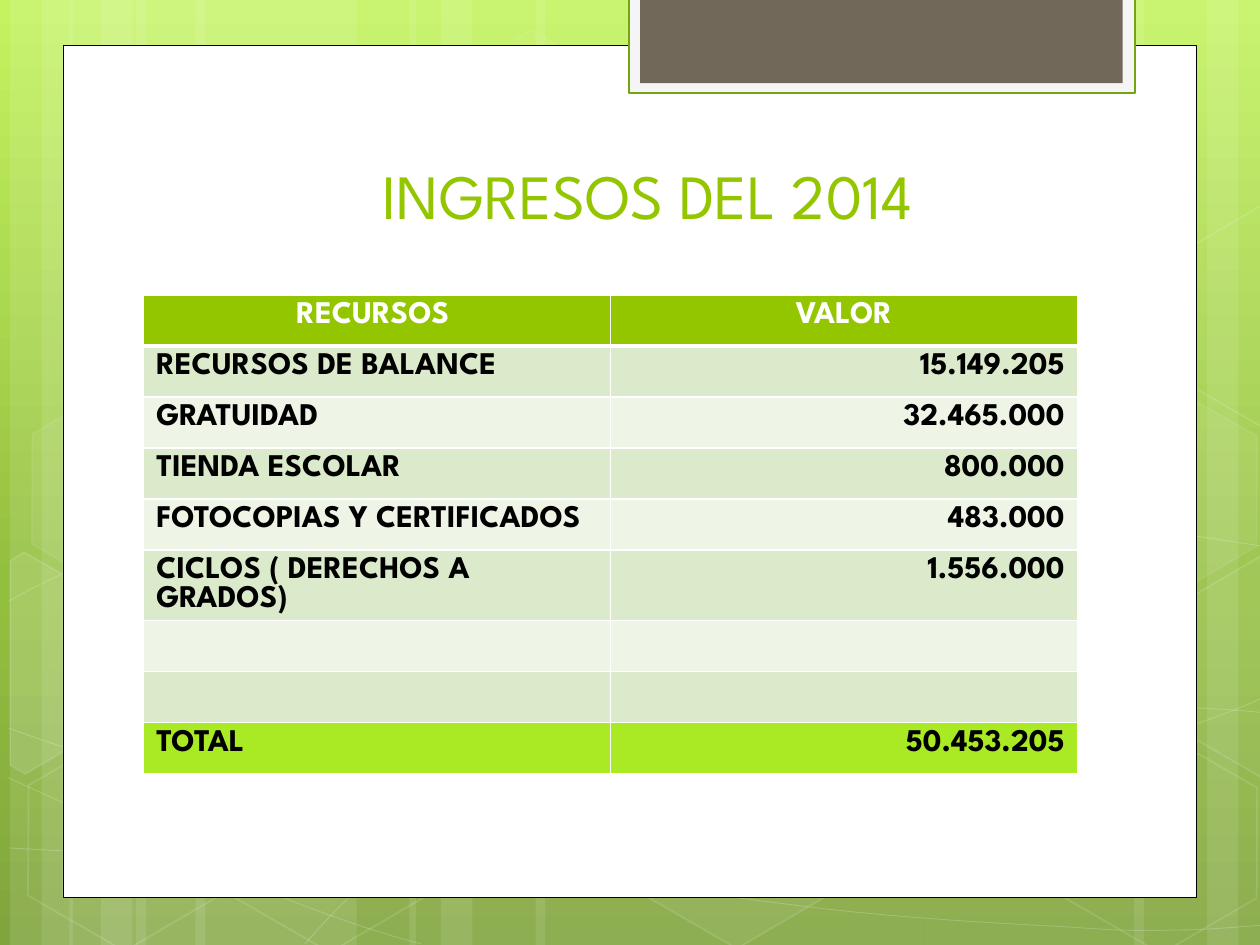
from copy import deepcopy
from dataclasses import dataclass
from math import cos, radians, sin

from lxml import etree
from pptx import Presentation
from pptx.dml.color import RGBColor
from pptx.enum.shapes import MSO_SHAPE
from pptx.enum.text import MSO_ANCHOR, PP_ALIGN
from pptx.oxml.ns import qn
from pptx.util import Inches, Pt

RECT, HEXAGON = MSO_SHAPE.RECTANGLE, MSO_SHAPE.HEXAGON
LEFT, CENTER, RIGHT = PP_ALIGN.LEFT, PP_ALIGN.CENTER, PP_ALIGN.RIGHT
BOTTOM = MSO_ANCHOR.BOTTOM


@dataclass(frozen=True)
class Theme:
    font: str = "League Spartan"
    title_size: int = 36
    cell_size: int = 18
    white: str = "FFFFFF"
    black: str = "000000"
    accent: str = "94C600"
    total: str = "AAEA25"
    bands: tuple = ("DCEACC", "EEF5E7")
    tab_edge: str = "F5F5F5"
    tab_line: str = "74A510"
    tab: str = "71685A"
    sky: tuple = ((0, "C3F35F"), (0.62, "93BF3F"), (1, "81A53E"))


THEME = Theme()
WIDTH, HEIGHT = 10, 7.5
TILT = 30

STRIPE_GROUPS = [(0.08, 1.75), (0.55, 1.75), (3.25, 3.08)]
RIGHT_STRIPES = [(7.33, 1.75), (9.58, 0.5), (9, 0.83)]

CURVES = [
    [(0.07, 6.73), (0.61, 6.76), (1.15, 6.79), (1.9, 6.78), (2.65, 6.77), (3.58, 6.75), (4.58, 6.65),
     (5.58, 6.55), (7, 6.36), (7.92, 6.17), (8.83, 5.98), (9.77, 5.68), (10.07, 5.51)],
    [(0.07, 4.77), (0.36, 4.61), (0.65, 4.46), (1.21, 4.31), (1.78, 4.16), (2.59, 3.94), (3.47, 3.87),
     (4.36, 3.8), (5.44, 3.79), (6.54, 3.87), (7.64, 3.95), (9.47, 4.26), (10.07, 4.34)],
    [(0.06, 6.17), (1.27, 6.72), (2.47, 7.27), (3.34, 7.49)],
    [(0.07, 5.78), (0.38, 5.89), (0.7, 6), (1.28, 6.16), (1.86, 6.31), (2.73, 6.56), (3.57, 6.73),
     (4.4, 6.9), (5.45, 7.08), (6.28, 7.18), (7.11, 7.29), (8, 7.33), (8.53, 7.36),
     (9.05, 7.4), (9.19, 7.38), (9.45, 7.38), (9.71, 7.37), (9.89, 7.35), (10.07, 7.34)],
    [(2.42, 7.49), (2.6, 7.29), (2.78, 7.09), (3.02, 6.91), (3.26, 6.73), (3.6, 6.53), (3.88, 6.39),
     (4.16, 6.25), (4.33, 6.19), (4.7, 6.09), (5.06, 5.99), (5.73, 5.85), (6.08, 5.78),
     (6.44, 5.71), (6.49, 5.71), (6.8, 5.69), (7.11, 5.66), (7.6, 5.63), (7.94, 5.62),
     (8.29, 5.61), (8.86, 5.62), (8.86, 5.62), (9.08, 5.62), (9.31, 5.62), (9.53, 5.62),
     (9.71, 5.63), (9.88, 5.64), (10.06, 5.66)],
]

HEXAGONS = [
    (3.34, 0.36, 4, 8), (4.97, 5.89, 6, 12), (0.11, 5.91, None, 12),
    (0.14, 3.12, 7, 8), (1.74, 5.92, None, 12), (7.53, 4.53, 10, 12),
    (8.34, 5.93, None, 12), (8.34, 3.14, 7, 8),
]
CUT_HEXAGONS = [
    ((0.36, 5.35), 10, [(0.08, 4.45), (0.19, 4.38), (0.96, 4.82), (0.95, 5.7), (0.2, 6.14), (0.08, 6.07)]),
    ((9.85, 5.2), 4, [(9.26, 4.85), (10.01, 4.41), (10.09, 4.46), (10.09, 6.13), (10.02, 6.17), (9.26, 5.73)]),
    ((9.85, 2.41), None, [(9.26, 2.07), (10.01, 1.63), (10.1, 1.68), (10.09, 3.35), (10.02, 3.39), (9.26, 2.95)]),
]

INCOME = [
    ("RECURSOS ", "VALOR"),
    ("RECURSOS DE BALANCE", "15.149.205"),
    ("GRATUIDAD", "32.465.000"),
    ("TIENDA ESCOLAR", "800.000"),
    ("FOTOCOPIAS Y CERTIFICADOS", "483.000"),
    ("CICLOS ( DERECHOS A GRADOS)", "1.556.000"),
    ("", ""),
    ("", ""),
    ("TOTAL", "50.453.205"),
]


def rgb(value):
    return RGBColor.from_string(value)


def paint(sp, fill=None, alpha=100, line=None, width=1, line_alpha=100):
    sp.shadow.inherit = False
    opacities = []
    for target, color, opacity in ((sp.fill, fill, alpha), (sp.line.fill, line, line_alpha)):
        if color:
            target.solid()
            target.fore_color.rgb = rgb(color)
            opacities.append(opacity)
        else:
            target.background()
    if line:
        sp.line.width = Pt(width)
    for color, opacity in zip(sp._element.spPr.iter(qn("a:srgbClr")), opacities):
        if opacity < 100:
            etree.SubElement(color, qn("a:alpha"), val=str(opacity * 1000))


def add_box(shapes, x, y, w, h, kind=RECT, **look):
    sp = shapes.add_shape(kind, *map(Inches, (x, y, w, h)))
    paint(sp, **look)
    return sp


def add_outline(shapes, points, close, **look):
    start, *rest = [(Inches(x), Inches(y)) for x, y in points]
    builder = shapes.build_freeform(*start)
    builder.add_line_segments(rest, close=close)
    sp = builder.convert_to_shape()
    paint(sp, **look)
    return sp


def add_curve(shapes, nodes, **look):
    sp = add_outline(shapes, nodes, False, **look)
    lines = list(sp._element.iter(qn("a:lnTo")))
    for i in range(0, len(lines), 3):
        curve = etree.Element(qn("a:cubicBezTo"))
        lines[i].addprevious(curve)
        for line in lines[i:i + 3]:
            curve.append(line[0])
            line.getparent().remove(line)


def untilt(point, center):
    dx, dy = (a - b for a, b in zip(point, center))
    c, n = cos(radians(TILT)), sin(radians(TILT))
    return center[0] + dx * c + dy * n, center[1] - dx * n + dy * c


def add_background(s):
    fill = s.background.fill
    fill.gradient()
    fill.gradient_angle = 270
    stops = next(s._element.iter(qn("a:gsLst")))
    stops.insert(1, deepcopy(stops[0]))
    for stop, (position, color) in zip(fill.gradient_stops, THEME.sky):
        stop.position = position
        stop.color.rgb = rgb(color)


def add_decoration(shapes):
    stripes = [(x + dx, w) for x, wide in STRIPE_GROUPS
               for dx, w in ((1, wide), (0, 0.5), (0.25, 0.83))]
    for x, w in stripes + RIGHT_STRIPES:
        add_box(shapes, x, 0, w, HEIGHT, fill=THEME.white, alpha=10)
    for nodes in CURVES:
        add_curve(shapes, nodes, line=THEME.white, width=0.5, line_alpha=20)
    for x, y, alpha, line_alpha in HEXAGONS:
        sp = add_box(shapes, x, y, 1.75, 1.52, HEXAGON, fill=alpha and THEME.white, alpha=alpha,
                     line=THEME.white, line_alpha=line_alpha)
        sp.adjustments[0] = 0.285
        sp.rotation = TILT
    for center, alpha, points in CUT_HEXAGONS:
        sp = add_outline(shapes, [untilt(point, center) for point in points], True,
                         fill=alpha and THEME.white, alpha=alpha, line=THEME.white, line_alpha=12)
        sp.rotation = TILT


def add_panel(shapes):
    add_box(shapes, 0.5, 0.36, 9, 6.76, fill=THEME.white, line=THEME.black, width=0.5)
    add_box(shapes, 4.99, -0.02, 4.02, 0.76, fill=THEME.tab_edge, line=THEME.tab_line, width=1.25)
    add_box(shapes, 5.08, -0.02, 3.83, 0.68, fill=THEME.tab)


def move_to_master(s, master):
    tree = master.shapes._spTree
    decor = [sp for sp in s.shapes if not sp.is_placeholder]
    for i, sp in enumerate(decor):
        tree.insert(2 + i, sp._element)


def write(tf, text, align, size, color, bold=False):
    p = tf.paragraphs[0]
    p.alignment = align
    r = p.add_run()
    r.text = text
    r.font.color.rgb = rgb(color)
    for name, value in {"name": THEME.font, "size": Pt(size), "bold": bold}.items():
        setattr(r.font, name, value)


def add_title(s, text):
    sp = s.shapes.title
    sp.left, sp.top, sp.width, sp.height = map(Inches, (1.3, 1.37, 7.68, 0.47))
    tf = sp.text_frame
    for name, value in {"margin_top": 0, "margin_bottom": 0, "vertical_anchor": BOTTOM}.items():
        setattr(tf, name, value)
    write(tf, text, CENTER, THEME.title_size, THEME.accent)


def set_borders(cell, widths):
    props = cell._tc.get_or_add_tcPr()
    for i, (side, width) in enumerate(widths.items()):
        line = etree.Element(qn(f"a:ln{side}"), w=str(Pt(width)))
        fill = etree.SubElement(line, qn("a:solidFill"))
        etree.SubElement(fill, qn("a:srgbClr"), val=THEME.white)
        props.insert(i, line)


def add_income_table(s, rows):
    last = len(rows) - 1
    frame = s.shapes.add_table(len(rows), 2, Inches(1.14), Inches(2.34),
                               Inches(7.41), Inches(0.405 * len(rows)))
    for i, row in enumerate(rows):
        fill = {0: THEME.accent, last: THEME.total}.get(i, THEME.bands[(i - 1) % 2])
        color = THEME.black if i else THEME.white
        for j, text in enumerate(row):
            cell = frame.table.cell(i, j)
            cell.fill.solid()
            cell.fill.fore_color.rgb = rgb(fill)
            set_borders(cell, {"L": 1, "R": 1, "T": 3 if i == 1 else 1, "B": 1 if i else 3})
            if text:
                align = (LEFT, RIGHT)[j] if i else CENTER
                write(cell.text_frame, text, align, THEME.cell_size, color, True)


def main():
    prs = Presentation()
    prs.slide_width, prs.slide_height = Inches(WIDTH), Inches(HEIGHT)
    s = prs.slides.add_slide(prs.slide_layouts[5])
    add_background(s)
    add_decoration(s.shapes.add_group_shape().shapes)
    add_panel(s.shapes)
    move_to_master(s, prs.slide_master)
    add_title(s, "INGRESOS DEL 2014")
    add_income_table(s, INCOME)
    prs.save("out.pptx")


if __name__ == "__main__":
    main()
